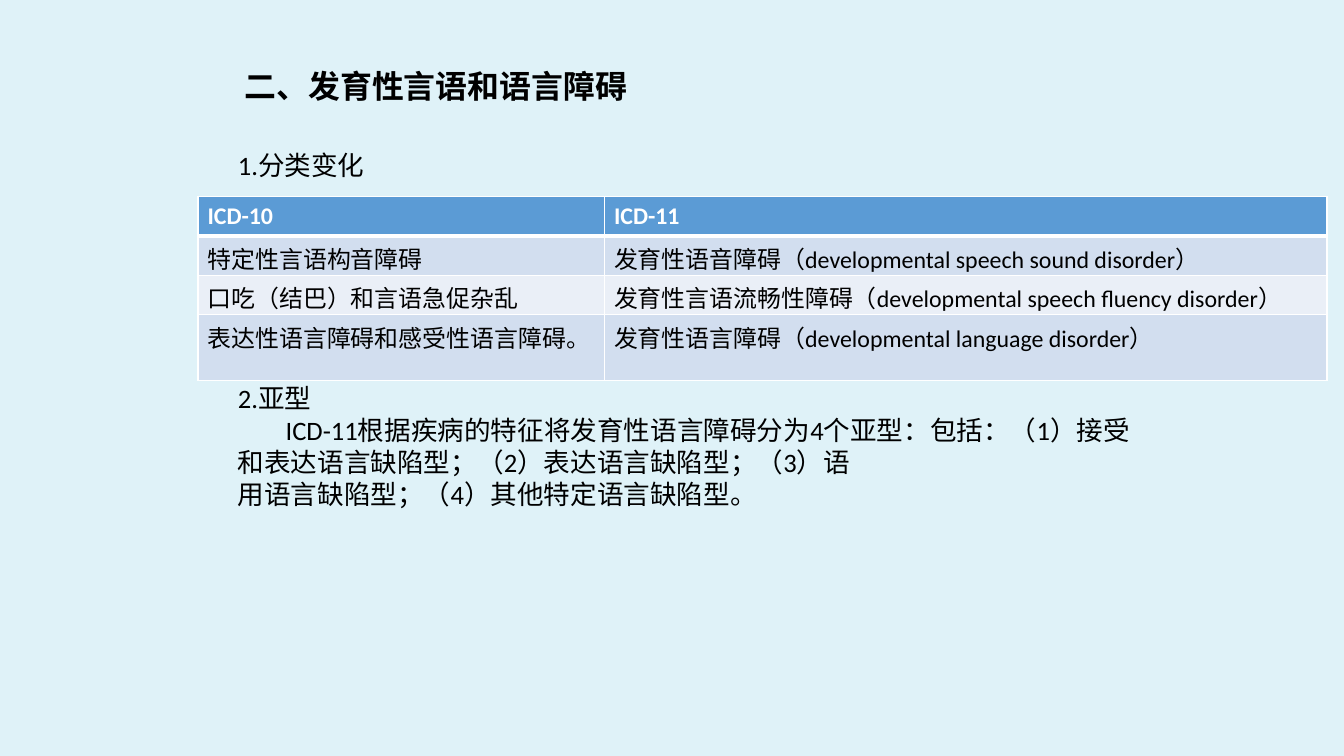
import pptx
import pptx.dml.color
import pptx.enum.text
import pptx.oxml
import pptx.oxml.ns
import pptx.util
from pptx.util import Cm

RGBColor = pptx.dml.color.RGBColor
BACKGROUND = RGBColor(0xDF, 0xF2, 0xF8)
HEADER = RGBColor(0x5B, 0x9B, 0xD5)
BAND_DARK = RGBColor(0xD2, 0xDE, 0xEF)
BAND_LIGHT = RGBColor(0xEA, 0xEF, 0xF7)
BLACK = RGBColor(0, 0, 0)
WHITE = RGBColor(0xFF, 0xFF, 0xFF)

CLASSIFICATION = [
    ("ICD-10", "ICD-11"),
    ("特定性言语构音障碍", "发育性语音障碍（developmental speech sound disorder）"),
    ("口吃（结巴）和言语急促杂乱", "发育性言语流畅性障碍（developmental speech fluency disorder）"),
    ("表达性语言障碍和感受性语言障碍。", "发育性语言障碍（developmental language disorder）"),
]


class SlideBuilder:
    font_name = "Calibri"

    def __init__(self, slide):
        self.slide = slide

    def background(self, color):
        fill = self.slide.background.fill
        fill.solid()
        fill.fore_color.rgb = color

    def style(self, paragraph, size, color=BLACK, bold=False):
        font = paragraph.font
        font.name = self.font_name
        font.size = pptx.util.Pt(size)
        font.color.rgb = color
        font.bold = bold

    def text(self, left, top, width, height, lines, size, bold=False):
        box = self.slide.shapes.add_textbox(Cm(left), Cm(top), Cm(width), Cm(height))
        frame = box.text_frame
        frame.word_wrap = True
        frame.auto_size = pptx.enum.text.MSO_AUTO_SIZE.NONE
        frame.text = "\n".join(lines)
        for paragraph in frame.paragraphs:
            self.style(paragraph, size, bold=bold)
        return frame.paragraphs

    def border(self, cell, side, points):
        line = pptx.oxml.parse_xml(
            f'<a:{side} {pptx.oxml.ns.nsdecls("a")} w="{pptx.util.Pt(points)}">'
            f'<a:solidFill><a:srgbClr val="{WHITE}"/></a:solidFill></a:{side}>'
        )
        cell._tc.get_or_add_tcPr().append(line)

    def table(self, left, top, widths, heights, rows):
        frame = self.slide.shapes.add_table(
            len(rows), len(widths), Cm(left), Cm(top), Cm(sum(widths)), Cm(sum(heights))
        )
        table = frame.table
        for column, width in zip(table.columns, widths):
            column.width = Cm(width)
        for row, height in zip(table.rows, heights):
            row.height = Cm(height)
        for r, values in enumerate(rows):
            is_header = r == 0
            band = HEADER if is_header else BAND_DARK if r % 2 else BAND_LIGHT
            for c, value in enumerate(values):
                cell = table.cell(r, c)
                cell.text = value
                cell.margin_bottom = Cm(0)
                self.style(cell.text_frame.paragraphs[0], 18, WHITE if is_header else BLACK, is_header)
                for side in ("lnL", "lnR", "lnT", "lnB"):
                    below_header = (r, side) in ((0, "lnB"), (1, "lnT"))
                    self.border(cell, side, 3 if below_header else 1)
                cell.fill.solid()
                cell.fill.fore_color.rgb = band


def main():
    deck = pptx.Presentation()
    deck.slide_width, deck.slide_height = Cm(35.71), Cm(20.09)
    builder = SlideBuilder(deck.slides.add_slide(deck.slide_layouts[6]))
    builder.background(BACKGROUND)
    builder.text(6.25, 1.65, 14.4, 1.27, ["二、发育性言语和语言障碍"], 24, bold=True)
    classification, subtypes, details, ending = builder.text(
        6.07, 3.84, 24.61, 10.85,
        [
            "1.分类变化",
            "2.亚型",
            "ICD-11根据疾病的特征将发育性语言障碍分为4个亚型：包括：（1）接受和表达语言缺陷型；（2）表达语言缺陷型；（3）语",
            "用语言缺陷型；（4）其他特定语言缺陷型。",
        ],
        20,
    )
    subtypes.space_before = pptx.util.Pt(151.5)
    details._p.get_or_add_pPr().set("indent", str(Cm(1.27)))
    builder.table(5.26, 5.23, [10.8, 19.2], [1.04, 1.04, 1.04, 1.75], CLASSIFICATION)
    deck.save("out.pptx")


if __name__ == "__main__":
    main()
